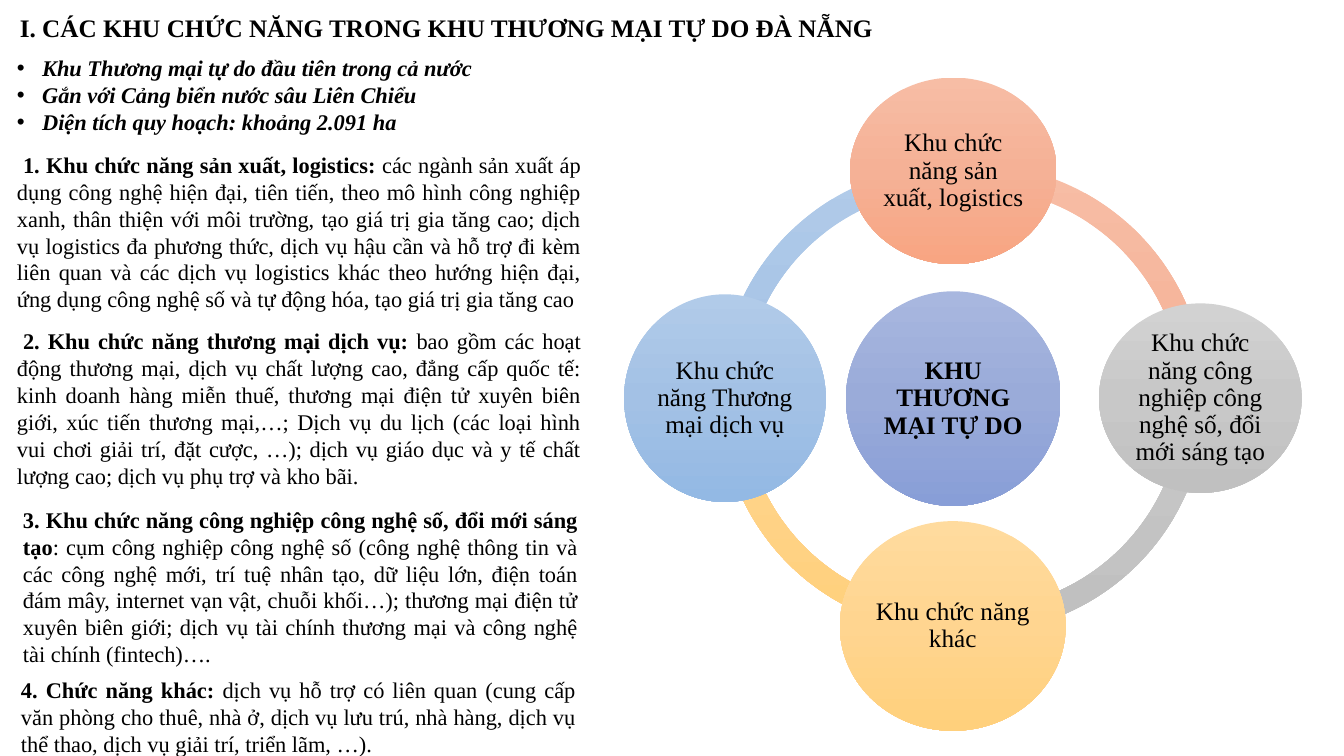
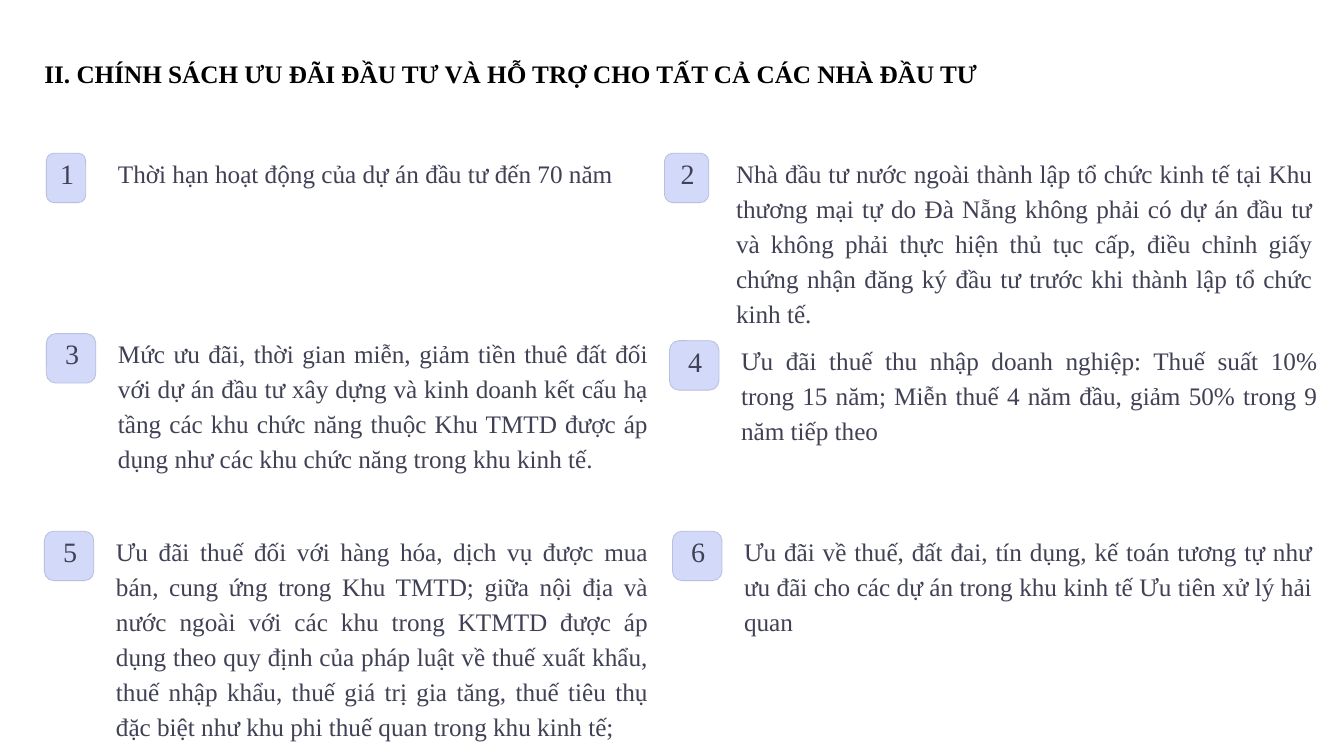
import copy
from dataclasses import dataclass

import lxml.etree
import pptx
import pptx.dml.color
import pptx.enum.shapes
import pptx.enum.text
import pptx.oxml.ns
import pptx.util

Inches = pptx.util.Inches
Pt = pptx.util.Pt
Align = pptx.enum.text.PP_ALIGN
Shape = pptx.enum.shapes.MSO_SHAPE


@dataclass(frozen=True)
class Theme:
    font: str = "Times New Roman"
    ink: str = "000000"
    muted: str = "404155"
    badge: str = "D2D9F9"
    badge_edge: str = "B8BFDF"
    orange: tuple = ("F7BDA5", "F5B196", "F8A582")
    grey: tuple = ("D2D2D2", "C8C8C8", "C0C0C0")
    yellow: tuple = ("FFDB9E", "FFD590", "FFD07C")
    blue: tuple = ("B1CBE9", "A3C1E5", "93B9E4")
    indigo: tuple = ("A8B7DF", "9AABD9", "889ED7")
    title_size: int = 18
    zone_size: int = 16
    label_size: int = 18
    badge_size: int = 20
    policy_size: int = 18


THEME = Theme()

FACTS = [
    "Khu Thương mại tự do đầu tiên trong cả nước",
    "Gắn với Cảng biển nước sâu Liên Chiểu",
    "Diện tích quy hoạch: khoảng 2.091 ha",
]

ZONES = [
    ((0.07, 1.45, 5.79, 1.7), 0.06, "1. Khu chức năng sản xuất, logistics: ",
     "các ngành sản xuất áp dụng công nghệ hiện đại, tiên tiến, theo mô hình công nghiệp xanh, "
     "thân thiện với môi trường, tạo giá trị gia tăng cao; dịch vụ logistics đa phương thức, "
     "dịch vụ hậu cần và hỗ trợ đi kèm liên quan và các dịch vụ logistics khác theo hướng hiện đại, "
     "ứng dụng công nghệ số và tự động hóa, tạo giá trị gia tăng cao"),
    ((0.07, 3.2, 5.79, 1.7), 0.06, "2. Khu chức năng thương mại dịch vụ: ",
     "bao gồm các hoạt động thương mại, dịch vụ chất lượng cao, đẳng cấp quốc tế: kinh doanh hàng "
     "miễn thuế, thương mại điện tử xuyên biên giới, xúc tiến thương mại,…; Dịch vụ du lịch (các loại "
     "hình vui chơi giải trí, đặt cược, …); dịch vụ giáo dục và y tế chất lượng cao; "
     "dịch vụ phụ trợ và kho bãi."),
    ((0.13, 4.97, 5.7, 1.7), 0, "3. Khu chức năng công nghiệp công nghệ số, đổi mới sáng tạo",
     ": cụm công nghiệp công nghệ số (công nghệ thông tin và các công nghệ mới, trí tuệ nhân tạo, "
     "dữ liệu lớn, điện toán đám mây, internet vạn vật, chuỗi khối…); thương mại điện tử xuyên biên "
     "giới; dịch vụ tài chính thương mại và công nghệ tài chính (fintech)…."),
    ((0.11, 6.66, 5.7, 0.84), 0, "4. Chức năng khác: ",
     "dịch vụ hỗ trợ có liên quan (cung cấp văn phòng cho thuê, nhà ở, dịch vụ lưu trú, nhà hàng, "
     "dịch vụ thể thao, dịch vụ giải trí, triển lãm, …)."),
]

RING_SIZE = 4.63
RING_ARCS = [
    (0.95, 0.87, 180, 270, THEME.blue),
    (0.95, 0.87, 90, 180, THEME.yellow),
    (1.14, 0.88, 359.79, 94.94, THEME.grey),
    (1.14, 0.86, 265.06, 0.21, THEME.orange),
]
RING_NODES = [
    (2.2, 2.12, 2.13, 2.13, THEME.indigo, "KHU THƯƠNG MẠI TỰ DO", True),
    (2.24, 0, 2.05, 1.85, THEME.orange, "Khu chức năng sản xuất, logistics", False),
    (4.71, 2.24, 2.01, 1.88, THEME.grey,
     "Khu chức năng công nghiệp công nghệ số, đổi mới sáng tạo", False),
    (2.14, 4.4, 2.24, 2.08, THEME.yellow, "Khu chức năng khác", False),
    (0, 2.15, 2, 2.06, THEME.blue, "Khu chức năng Thương mại dịch vụ", False),
]

POLICIES = [
    ((0.46, 1.52, 5.97, 0.35), 0.39, "Thời hạn hoạt động của dự án đầu tư đến 70 năm"),
    ((6.59, 1.52, 6.43, 1.72), 0.44,
     "Nhà đầu tư nước ngoài thành lập tổ chức kinh tế tại Khu thương mại tự do Đà Nẵng không phải "
     "có dự án đầu tư và không phải thực hiện thủ tục cấp, điều chỉnh giấy chứng nhận đăng ký đầu tư "
     "trước khi thành lập tổ chức kinh tế."),
    ((0.46, 3.31, 5.97, 1.39), 0.49,
     "Mức ưu đãi, thời gian miễn, giảm tiền thuê đất đối với dự án đầu tư xây dựng và kinh doanh "
     "kết cấu hạ tầng các khu chức năng thuộc Khu TMTD được áp dụng như các khu chức năng "
     "trong khu kinh tế."),
    ((6.64, 3.38, 6.43, 1.04), 0.49,
     "Ưu đãi thuế thu nhập doanh nghiệp: Thuế suất 10% trong 15 năm; Miễn thuế 4 năm đầu, "
     "giảm 50% trong 9 năm tiếp theo"),
    ((0.44, 5.27, 5.99, 2.09), 0.49,
     "Ưu đãi thuế đối với hàng hóa, dịch vụ được mua bán, cung ứng trong Khu TMTD; giữa nội địa và "
     "nước ngoài với các khu trong KTMTD được áp dụng theo quy định của pháp luật về thuế xuất khẩu, "
     "thuế nhập khẩu, thuế giá trị gia tăng, thuế tiêu thụ đặc biệt như khu phi thuế quan "
     "trong khu kinh tế;"),
    ((6.67, 5.27, 6.35, 1.24), 0.49,
     "Ưu đãi về thuế, đất đai, tín dụng, kế toán tương tự như ưu đãi cho các dự án trong khu kinh tế "
     "Ưu tiên xử lý hải quan"),
]


def rgb(code):
    return pptx.dml.color.RGBColor.from_string(code)


def style(paragraph, size, color=THEME.ink, bold=None, italic=None, align=None, spacing=None):
    paragraph.alignment = align
    paragraph.line_spacing = spacing
    font = paragraph.font
    font.name, font.size = THEME.font, Pt(size)
    font.bold, font.italic = bold, italic
    font.color.rgb = rgb(color)


def set_insets(frame, left, top, right, bottom):
    frame.margin_left, frame.margin_top = Inches(left), Inches(top)
    frame.margin_right, frame.margin_bottom = Inches(right), Inches(bottom)


def add_frame(slide, box, inset=None):
    frame = slide.shapes.add_textbox(*map(Inches, box)).text_frame
    frame.word_wrap = True
    if inset is not None:
        set_insets(frame, inset, inset, inset, inset)
    return frame


def add_plain_shape(slide, kind, box):
    shape = slide.shapes.add_shape(kind, *map(Inches, box))
    shape.shadow.inherit = False
    shape.line.fill.background()
    return shape


def fill_gradient(shape, colors):
    shape.fill.gradient()
    shape.fill.gradient_angle = 270
    stop_list = shape._element.spPr.find(".//" + pptx.oxml.ns.qn("a:gsLst"))
    stop_list.append(copy.deepcopy(stop_list[-1]))
    for stop, position, color in zip(shape.fill.gradient_stops, (0, 0.5, 1), colors):
        stop.position = position
        stop.color.rgb = rgb(color)


def set_indent(paragraph, margin, first_line):
    properties = paragraph._p.get_or_add_pPr()
    properties.set("marL", str(Inches(margin)))
    properties.set("indent", str(Inches(first_line)))
    return properties


def add_title(slide, box, text, inset=None, align=None, spacing=None):
    title = add_frame(slide, box, inset).paragraphs[0]
    title.text = text
    style(title, THEME.title_size, bold=True, align=align, spacing=spacing)


def add_facts(slide, box):
    frame = add_frame(slide, box)
    for index, text in enumerate(FACTS):
        fact = frame.add_paragraph() if index else frame.paragraphs[0]
        fact.text = text
        properties = set_indent(fact, 0.25, -0.25)
        for tag, name, value in (("a:buFont", "typeface", "Arial"), ("a:buChar", "char", "•")):
            lxml.etree.SubElement(properties, pptx.oxml.ns.qn(tag)).set(name, value)
        style(fact, THEME.zone_size, bold=True, italic=True)


def add_zone(slide, box, first_line, heading, detail):
    zone = add_frame(slide, box).paragraphs[0]
    set_indent(zone, 0, first_line)
    zone.add_run().text = heading
    zone.runs[0].font.bold = True
    zone.add_run().text = detail
    style(zone, THEME.zone_size, align=Align.JUSTIFY)


def add_ring(slide, left, top):
    for x, y, start, end, colors in RING_ARCS:
        arc = add_plain_shape(slide, Shape.BLOCK_ARC, (left + x, top + y, RING_SIZE, RING_SIZE))
        for index, value in enumerate((start * 0.6, end * 0.6, 0.05)):
            arc.adjustments[index] = value
        fill_gradient(arc, colors)
    for x, y, width, height, colors, text, bold in RING_NODES:
        node = add_plain_shape(slide, Shape.OVAL, (left + x, top + y, width, height))
        fill_gradient(node, colors)
        frame = node.text_frame
        frame.word_wrap = True
        frame.vertical_anchor = pptx.enum.text.MSO_ANCHOR.MIDDLE
        set_insets(frame, 0.03, 0.03, 0.03, 0.03)
        label = frame.paragraphs[0]
        label.text = text
        style(label, THEME.label_size, bold=bold, align=Align.CENTER, spacing=0.9)


def add_policy(slide, box, number, badge_width, text):
    left, top, width, height = box
    badge = add_plain_shape(slide, Shape.ROUNDED_RECTANGLE, (left, top, badge_width, 0.49))
    badge.adjustments[0] = 0.19
    badge.fill.solid()
    badge.fill.fore_color.rgb = rgb(THEME.badge)
    badge.line.color.rgb = rgb(THEME.badge_edge)
    badge.line.width = Pt(0.6)
    frame = badge.text_frame
    frame.word_wrap = False
    frame.vertical_anchor = pptx.enum.text.MSO_ANCHOR.TOP
    set_insets(frame, 0.02, 0.02, 0, 0)
    label = frame.paragraphs[0]
    label.text = str(number)
    style(label, THEME.badge_size, THEME.muted, align=Align.CENTER, spacing=Pt(23))

    text_offset = 0.71
    policy = add_frame(slide, (left + text_offset, top, width - text_offset, height), 0).paragraphs[0]
    policy.text = text
    style(policy, THEME.policy_size, THEME.muted, align=Align.JUSTIFY, spacing=Pt(25))


def build_zones_slide(slide):
    add_title(slide, (0, 0.11, 8.86, 0.42),
              "I. CÁC KHU CHỨC NĂNG TRONG KHU THƯƠNG MẠI TỰ DO ĐÀ NẴNG",
              align=Align.CENTER, spacing=0.9)
    add_facts(slide, (0.07, 0.49, 11.04, 0.91))
    add_ring(slide, 6.19, 0.77)
    for zone in ZONES:
        add_zone(slide, *zone)


def build_policies_slide(slide):
    add_title(slide, (0.44, 0.48, 9.6, 0.41),
              "II. CHÍNH SÁCH ƯU ĐÃI ĐẦU TƯ VÀ HỖ TRỢ CHO TẤT CẢ CÁC NHÀ ĐẦU TƯ",
              inset=0, spacing=Pt(29))
    for number, (box, badge_width, text) in enumerate(POLICIES, 1):
        add_policy(slide, box, number, badge_width, text)


def main():
    deck = pptx.Presentation()
    deck.slide_width, deck.slide_height = Inches(13.33), Inches(7.5)
    for build in (build_zones_slide, build_policies_slide):
        build(deck.slides.add_slide(deck.slide_layouts[6]))
    deck.save("out.pptx")


if __name__ == "__main__":
    main()
